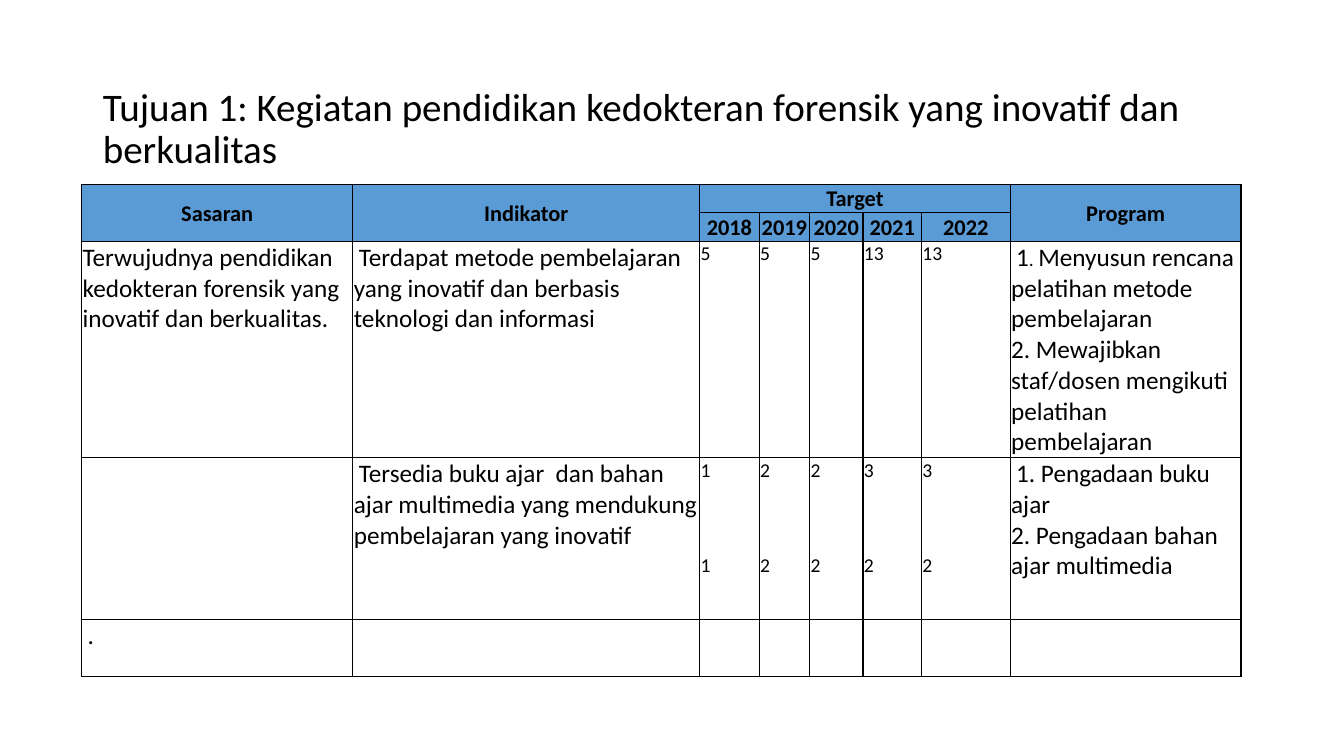
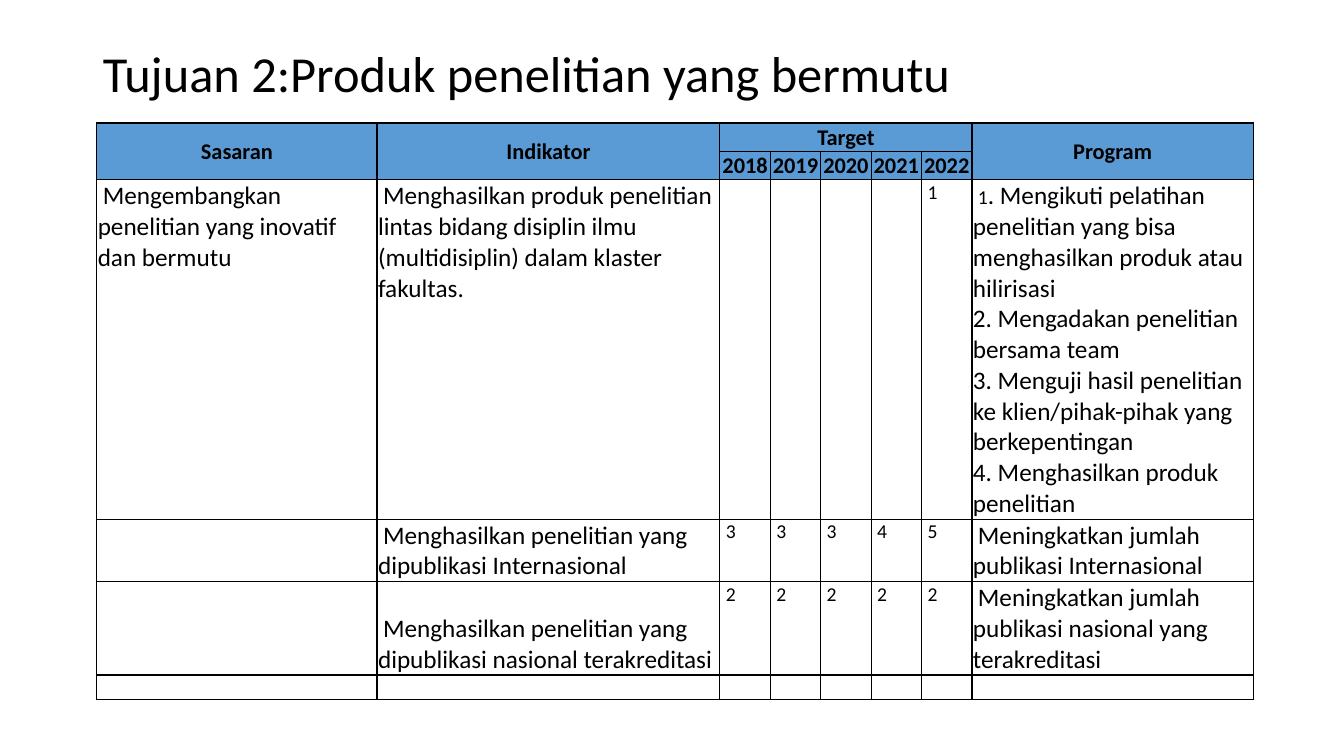
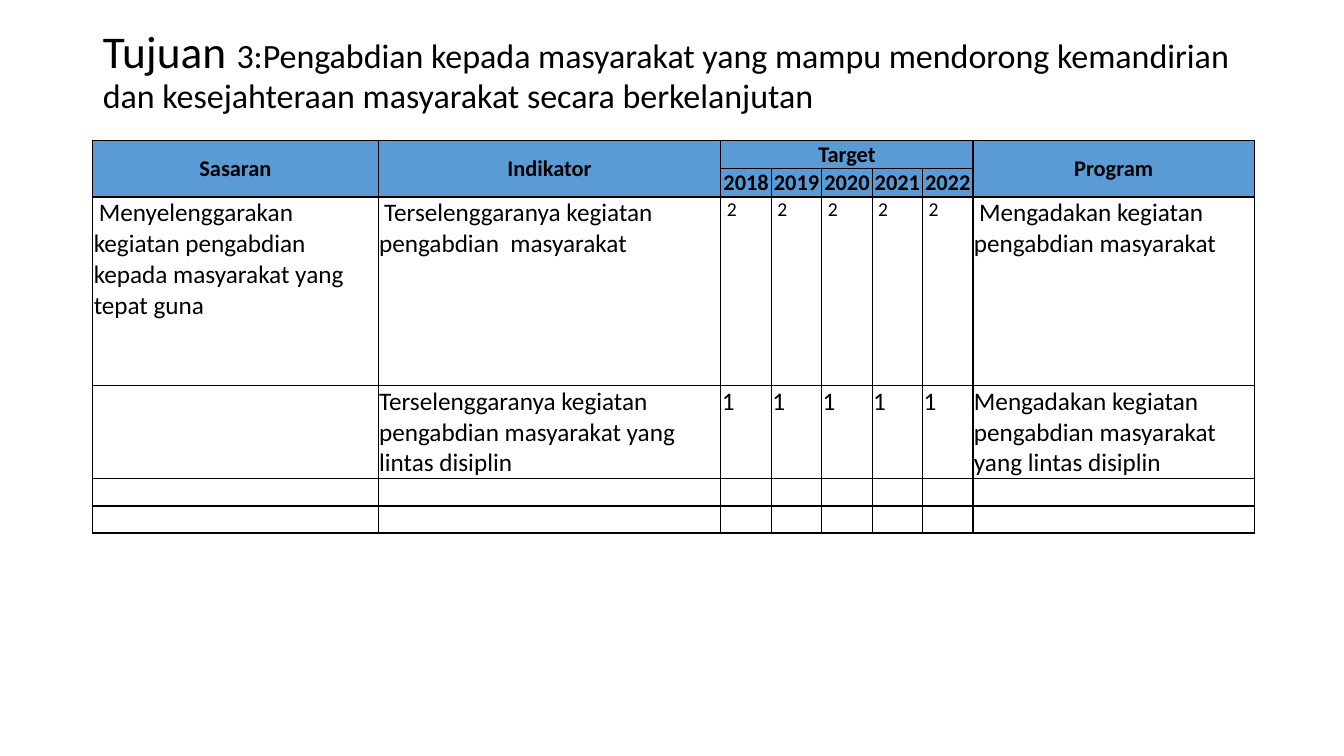
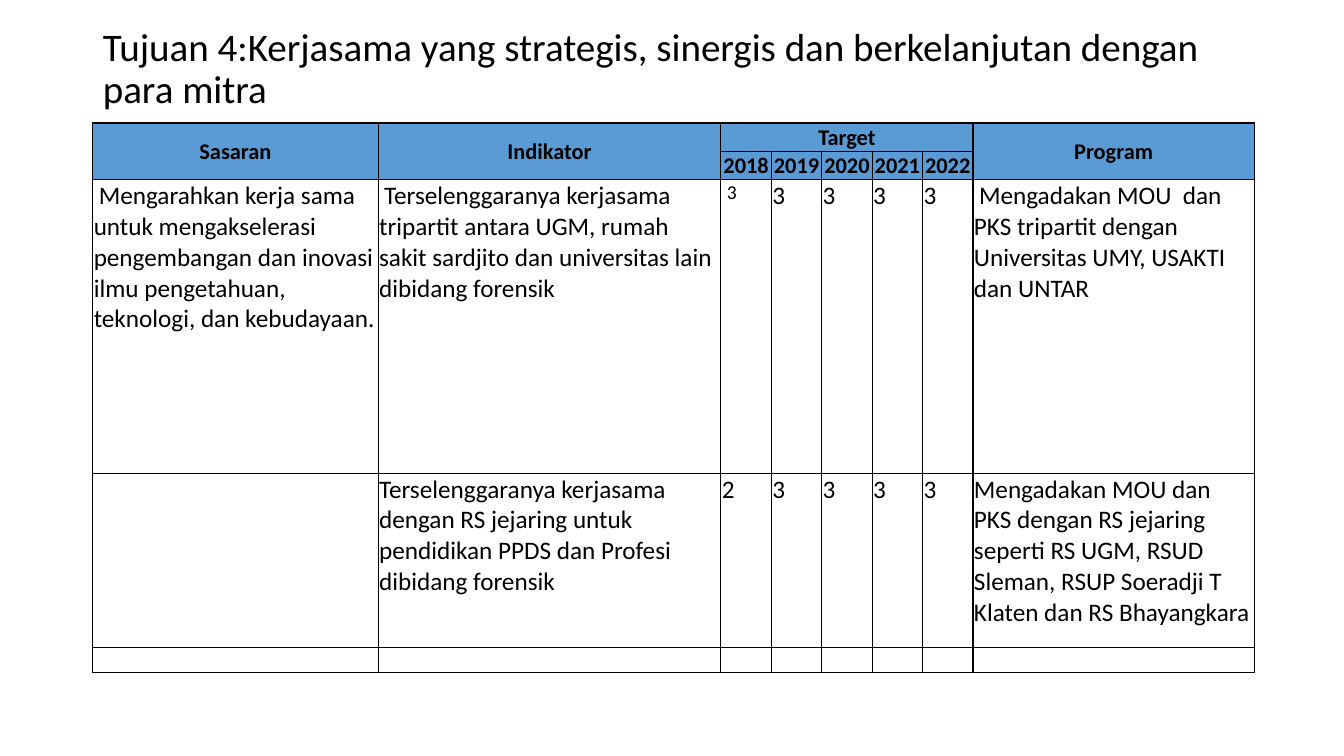
from dataclasses import dataclass
from lxml import etree
from pptx import Presentation
from pptx import util as u
from pptx.dml.color import RGBColor
from pptx.enum import text
from pptx.oxml.ns import qn


@dataclass(frozen=True)
class Theme:
    font: str = "Calibri"
    ink: RGBColor = RGBColor(0x00, 0x00, 0x00)
    head: RGBColor = RGBColor(0x5B, 0x9B, 0xD5)
    paper: RGBColor = RGBColor(0xFF, 0xFF, 0xFF)
    head_size: float = 16
    body_size: float = 18
    small_size: float = 14
    border: float = 1
    pad: float = 0.01
    indent: float = 0.05


T = Theme()
TOP, MIDDLE, BOTTOM = (text.MSO_ANCHOR.TOP, text.MSO_ANCHOR.MIDDLE,
                       text.MSO_ANCHOR.BOTTOM)


@dataclass(frozen=True)
class Cell:
    paras: tuple = ()
    size: float = T.body_size
    indent: bool = False
    anchor: int = TOP
    gap: float = 0


def body(*paras, **kw):
    return Cell(paras, **kw)


def lead(*paras, **kw):
    return Cell(paras, indent=True, **kw)


def small(*paras, **kw):
    return Cell(paras, size=T.small_size, **kw)


EMPTY = small()
EMPTY_ROW = [EMPTY] * 8
YEARS = ["2018", "2019", "2020", "2021", "2022"]
YEAR_COL = 2
PROGRAM_COL = YEAR_COL + len(YEARS)
HEAD_ROWS = [0.27, 0.27]
WIDE_COLS = [2.83, 3.4] + [0.5] * 5 + [2.79]

SLIDES = [
    dict(
        title=[("Tujuan 1: Kegiatan pendidikan kedokteran forensik yang inovatif dan berkualitas", 27.9)],
        title_mid=1.29, at=(0.81, 1.83),
        cols=[2.69, 3.44, 0.59, 0.5, 0.53, 0.58, 0.88, 2.29],
        heights=[1.9, 1.61, 0.56],
        rows=[
            [body("Terwujudnya pendidikan kedokteran forensik yang inovatif dan berkualitas."),
             lead("Terdapat metode pembelajaran yang inovatif dan berbasis teknologi dan informasi"),
             *[small(n) for n in ("5", "5", "5", "13", "13")],
             lead([("1", T.body_size), (". ", T.small_size),
                   ("Menyusun rencana pelatihan metode pembelajaran", T.body_size)],
                  "2. Mewajibkan staf/dosen mengikuti pelatihan pembelajaran")],
            [EMPTY,
             lead("Tersedia buku ajar  dan bahan ajar multimedia yang mendukung pembelajaran yang inovatif"),
             *[small(a, b, gap=51) for a, b in ("11", "22", "22", "32", "32")],
             lead("1. Pengadaan buku ajar", "2. Pengadaan bahan ajar multimedia")],
            [lead("."), *EMPTY_ROW[1:]],
        ]),
    dict(
        title=[("Tujuan 2:Produk penelitian yang bermutu", 36)],
        title_mid=0.755, at=(0.96, 1.22),
        cols=[2.78] + WIDE_COLS[1:],
        heights=[3.28, 0.61, 0.9, 0.24],
        rows=[
            [lead("Mengembangkan penelitian yang inovatif dan bermutu"),
             lead("Menghasilkan produk penelitian lintas bidang disiplin ilmu (multidisiplin) dalam klaster fakultas."),
             *[EMPTY] * 4, small("1", indent=True),
             lead([("1", T.small_size),
                   (". Mengikuti pelatihan penelitian yang bisa menghasilkan produk atau hilirisasi", T.body_size)],
                  "2. Mengadakan penelitian bersama team",
                  "3. Menguji hasil penelitian ke klien/pihak-pihak yang berkepentingan",
                  "4. Menghasilkan produk penelitian")],
            [EMPTY,
             lead("Menghasilkan penelitian yang dipublikasi Internasional", anchor=BOTTOM),
             *[small(n, indent=True) for n in "33345"],
             lead("Meningkatkan jumlah publikasi Internasional")],
            [EMPTY,
             lead("Menghasilkan penelitian yang dipublikasi nasional terakreditasi", anchor=BOTTOM),
             *[small(n, indent=True) for n in "22222"],
             lead("Meningkatkan jumlah publikasi nasional yang terakreditasi")],
            EMPTY_ROW,
        ]),
    dict(
        title=[("Tujuan ", 32.4),
               ("3:Pengabdian kepada masyarakat yang mampu mendorong kemandirian "
                "dan kesejahteraan masyarakat secara berkelanjutan", 24.3)],
        title_mid=0.72, at=(0.92, 1.39), cols=WIDE_COLS,
        heights=[1.87, 0.83, 0.27, 0.27],
        rows=[
            [lead("Menyelenggarakan kegiatan pengabdian kepada masyarakat yang tepat guna"),
             lead("Terselenggaranya kegiatan pengabdian  masyarakat"),
             *[small(n, indent=True) for n in "22222"],
             lead("Mengadakan kegiatan pengabdian masyarakat")],
            [EMPTY,
             body("Terselenggaranya kegiatan pengabdian masyarakat yang lintas disiplin", anchor=BOTTOM),
             *[body(n) for n in "11111"],
             body("Mengadakan kegiatan pengabdian masyarakat yang lintas disiplin", anchor=BOTTOM)],
            EMPTY_ROW,
            EMPTY_ROW,
        ]),
    dict(
        title=[("Tujuan 4:Kerjasama yang strategis, sinergis dan berkelanjutan dengan para mitra", 27.9)],
        title_mid=0.69, at=(0.92, 1.22), cols=WIDE_COLS,
        heights=[2.91, 1.73, 0.24],
        rows=[
            [lead("Mengarahkan kerja sama untuk mengakselerasi pengembangan dan inovasi "
                  "ilmu pengetahuan, teknologi, dan kebudayaan."),
             lead("Terselenggaranya kerjasama tripartit antara UGM, rumah sakit sardjito "
                  "dan universitas lain dibidang forensik"),
             small("3", indent=True), *[body(n) for n in "3333"],
             lead("Mengadakan MOU  dan PKS tripartit dengan Universitas UMY, USAKTI dan UNTAR")],
            [EMPTY,
             body("Terselenggaranya kerjasama dengan RS jejaring untuk pendidikan PPDS dan Profesi dibidang forensik"),
             *[body(n) for n in "23333"],
             body("Mengadakan MOU dan PKS dengan RS jejaring seperti RS UGM, RSUD Sleman, "
                  "RSUP Soeradji T Klaten dan RS Bhayangkara")],
            EMPTY_ROW,
        ]),
]


def style(font, size, bold=False):
    font.name, font.size, font.bold = T.font, u.Pt(size), bold
    font.color.rgb = T.ink


def add_runs(p, runs):
    for words, size in runs:
        r = p.add_run()
        r.text = words
        r.font.size = u.Pt(size)


def add_title(s, runs, mid):
    sp, height = s.shapes.title, 1
    sp.left, sp.top = u.Inches(0.92), u.Inches(mid - height / 2)
    sp.width, sp.height = u.Inches(11.5), u.Inches(height)
    tf = sp.text_frame
    tf.word_wrap, tf.auto_size = True, text.MSO_AUTO_SIZE.NONE
    tf.vertical_anchor = MIDDLE
    p = tf.paragraphs[0]
    p.alignment, p.line_spacing = text.PP_ALIGN.LEFT, 0.9
    style(p.font, runs[0][1])
    add_runs(p, runs)


def format_cell(c, fill, anchor):
    c.margin_left = c.margin_right = c.margin_top = u.Inches(T.pad)
    c.margin_bottom = 0
    c.vertical_anchor = anchor
    c.fill.solid()
    c.fill.fore_color.rgb = fill
    tcPr = c._tc.get_or_add_tcPr()
    for i, side in enumerate(("lnL", "lnR", "lnT", "lnB")):
        ln = etree.Element(qn("a:" + side), w=str(u.Pt(T.border)))
        solid = etree.SubElement(ln, qn("a:solidFill"))
        etree.SubElement(solid, qn("a:srgbClr"), val=str(T.ink))
        tcPr.insert(i, ln)


def fill_cell(c, cell):
    format_cell(c, T.paper, cell.anchor)
    tf = c.text_frame
    for i, para in enumerate(cell.paras or ("",)):
        p = tf.add_paragraph() if i else tf.paragraphs[0]
        if cell.indent and not i:
            p._p.get_or_add_pPr().set("indent", str(u.Inches(T.indent)))
        if cell.gap and i:
            p.space_before = u.Pt(cell.gap)
        style(p.font, cell.size)
        if not para:
            etree.SubElement(p._p, qn("a:endParaRPr"), sz=str(int(cell.size * 100)))
        elif isinstance(para, str):
            p.text = para
        else:
            add_runs(p, para)


def fill_header(tbl):
    labels = {(0, 0): "Sasaran", (0, 1): "Indikator", (0, YEAR_COL): "Target",
              (0, PROGRAM_COL): "Program"}
    labels.update({(1, YEAR_COL + i): y for i, y in enumerate(YEARS)})
    for row in range(len(HEAD_ROWS)):
        for col in range(len(tbl.columns)):
            c = tbl.cell(row, col)
            format_cell(c, T.head, MIDDLE)
            p = c.text_frame.paragraphs[0]
            p.alignment = text.PP_ALIGN.CENTER
            style(p.font, T.head_size, True)
            if (row, col) in labels:
                p.text = labels[row, col]
    for col in (0, 1, PROGRAM_COL):
        tbl.cell(0, col).merge(tbl.cell(1, col))
    tbl.cell(0, YEAR_COL).merge(tbl.cell(0, PROGRAM_COL - 1))


def add_target_table(s, at, cols, heights, rows):
    heights = HEAD_ROWS + heights
    box = [u.Inches(v) for v in (*at, sum(cols), sum(heights))]
    tbl = s.shapes.add_table(len(heights), len(cols), *box).table
    tbl.first_row = tbl.horz_banding = False
    for col, w in zip(tbl.columns, cols):
        col.width = u.Inches(w)
    for row, h in zip(tbl.rows, heights):
        row.height = u.Inches(h)
    fill_header(tbl)
    for i, row in enumerate(rows, len(HEAD_ROWS)):
        for j, cell in enumerate(row):
            fill_cell(tbl.cell(i, j), cell)


def main():
    prs = Presentation()
    prs.slide_width, prs.slide_height = u.Inches(13.33), u.Inches(7.5)
    for d in SLIDES:
        s = prs.slides.add_slide(prs.slide_layouts[5])
        add_title(s, d["title"], d["title_mid"])
        add_target_table(s, d["at"], d["cols"], d["heights"], d["rows"])
    prs.save("out.pptx")


if __name__ == "__main__":
    main()
